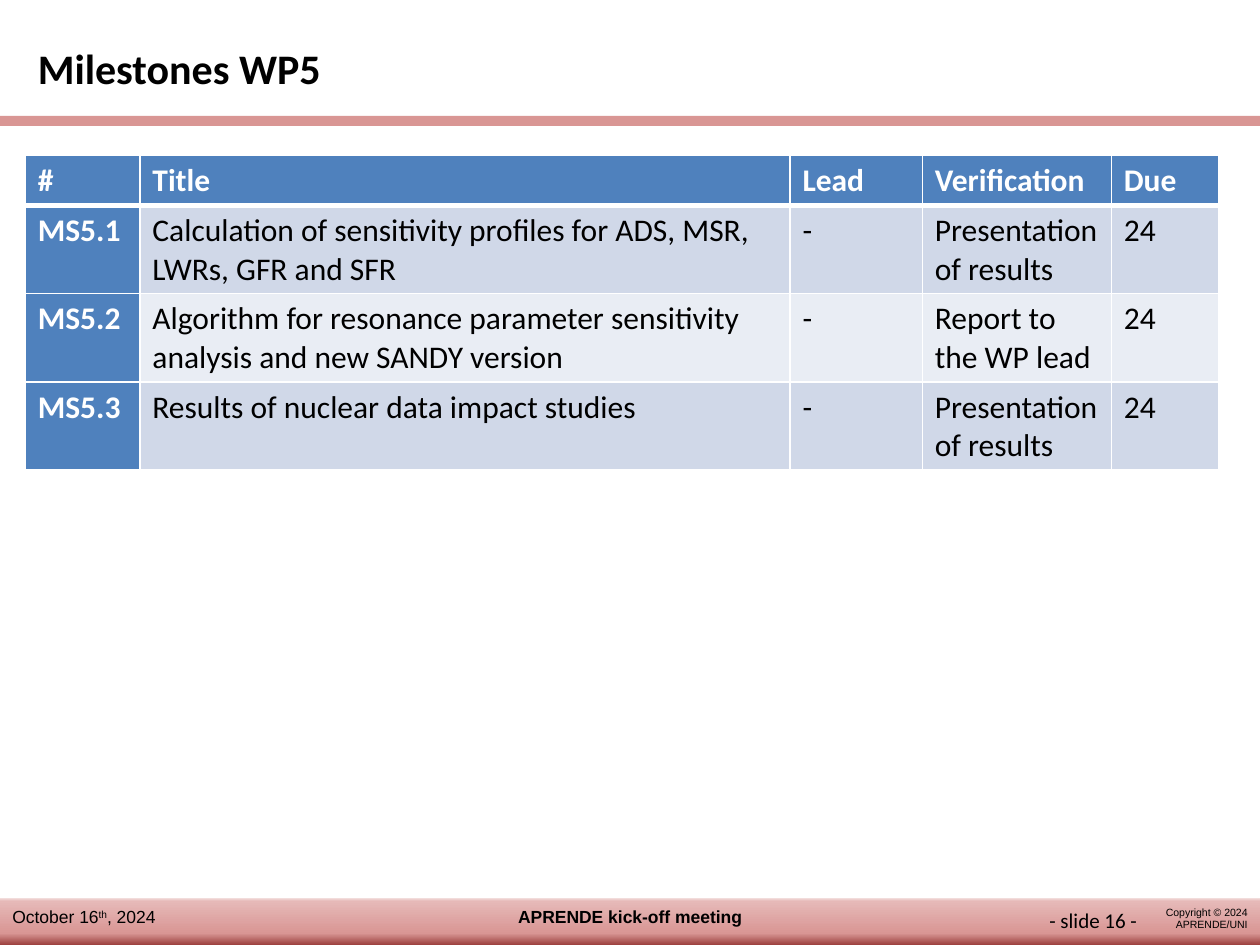
from lxml import etree
from pptx import Presentation
from pptx.dml.color import RGBColor
from pptx.enum.shapes import MSO_SHAPE
from pptx.enum.text import MSO_ANCHOR, MSO_AUTO_SIZE, PP_ALIGN
from pptx.oxml.ns import qn
from pptx.util import Inches, Pt

RECTANGLE = MSO_SHAPE.RECTANGLE
TOP = MSO_ANCHOR.TOP
FIT_SHAPE = MSO_AUTO_SIZE.SHAPE_TO_FIT_TEXT
LEFT, CENTER, RIGHT = PP_ALIGN.LEFT, PP_ALIGN.CENTER, PP_ALIGN.RIGHT

COLORS = {
    "black": "000000",
    "white": "FFFFFF",
    "rule": "D99694",
    "header": "4F81BD",
    "odd_row": "D0D8E8",
    "even_row": "E9EDF4",
}
FOOTER_STOPS = [(0, "953735"), (27, "D99694"), (94, "E6B9B8"), (100, "F2DCDB")]

COLUMN_WIDTHS = [0.91, 5.16, 1.05, 1.5, 0.85]
HEADER_HEIGHT, ROW_HEIGHT = 0.4, 0.7
MILESTONES = [
    ["#", "Title", "Lead", "Verification", "Due"],
    ["MS5.1", "Calculation of sensitivity profiles for ADS, MSR, LWRs, GFR and SFR",
     "-", "Presentation of results", "24"],
    ["MS5.2", "Algorithm for resonance parameter sensitivity analysis and new SANDY version",
     "-", "Report to\nthe WP lead", "24"],
    ["MS5.3", "Results of nuclear data impact studies",
     "-", "Presentation of results", "24"],
]


def format_text(frame, size, font="Arial", color="black", bold=False, align=LEFT):
    """Apply one style to every run of a text frame."""
    for paragraph in frame.paragraphs:
        paragraph.alignment = align
        for run in paragraph.runs:
            run.font.size = Pt(size)
            run.font.name = font
            run.font.bold = bold
            run.font.color.rgb = RGBColor.from_string(COLORS[color])


def add_label(slide, box, text, size, wrap=True, **style):
    """Add a text box and return its text frame."""
    frame = slide.shapes.add_textbox(*map(Inches, box)).text_frame
    frame.word_wrap = wrap
    frame.auto_size = FIT_SHAPE
    frame.text = text
    format_text(frame, size, **style)
    return frame


def add_band(slide, box):
    """Add a borderless rectangle in the rule colour."""
    band = slide.shapes.add_shape(RECTANGLE, *map(Inches, box))
    band.shadow.inherit = False
    band.line.fill.background()
    band.fill.solid()
    band.fill.fore_color.rgb = RGBColor.from_string(COLORS["rule"])
    return band


def apply_gradient(band, stops):
    """Fill a band with a gradient running from bottom to top."""
    band.fill.gradient()
    band.fill.gradient_angle = 90
    stop_list = band._element.spPr.find(".//" + qn("a:gsLst"))
    for old_stop in list(stop_list):
        stop_list.remove(old_stop)
    for position, color in stops:
        stop = etree.SubElement(stop_list, qn("a:gs"), pos=str(position * 1000))
        etree.SubElement(stop, qn("a:srgbClr"), val=color)


def add_footer(slide):
    """Add the footer band with date, event, slide number and copyright."""
    apply_gradient(add_band(slide, (0, 7.13, 10, 0.38)), FOOTER_STOPS)
    date = add_label(slide, (0, 7.14, 2.78, 0.27), "October 16", 10)
    for part in ("th", ", 2024"):
        date.paragraphs[0].add_run().text = part
    format_text(date, 10)
    date.paragraphs[0].runs[1]._r.get_or_add_rPr().set("baseline", "30000")
    add_label(slide, (3.61, 7.14, 2.78, 0.27), "APRENDE kick-off meeting", 10,
              bold=True, align=CENTER)
    add_label(slide, (9.09, 7.14, 0.91, 0.3), "Copyright © 2024\nAPRENDE/UNI", 6,
              align=RIGHT)
    add_label(slide, (8.23, 7.15, 0.93, 0.3), "- slide 16 -", 12, wrap=False,
              font="Calibri")


def set_title(slide, text):
    """Place and format the slide title."""
    title = slide.shapes.title
    title.left, title.top, title.width, title.height = map(Inches, (0.2, 0.29, 5, 0.5))
    frame = title.text_frame
    frame.text = text
    frame.word_wrap = True
    frame.auto_size = FIT_SHAPE
    frame.vertical_anchor = TOP
    format_text(frame, 24, font="Calibri", bold=True)


def set_borders(cell, widths):
    """Draw white cell borders, given in points for each side."""
    properties = cell._tc.get_or_add_tcPr()
    for index, (side, width) in enumerate(widths.items()):
        border = etree.Element(qn(f"a:ln{side}"), w=str(Pt(width)))
        fill = etree.SubElement(border, qn("a:solidFill"))
        etree.SubElement(fill, qn("a:srgbClr"), val=COLORS["white"])
        properties.insert(index, border)


def format_cell(cell, row, column):
    """Style a cell by its place in the table."""
    heading = row == 0 or column == 0
    fill = "header" if heading else "odd_row" if row % 2 else "even_row"
    cell.fill.solid()
    cell.fill.fore_color.rgb = RGBColor.from_string(COLORS[fill])
    format_text(cell.text_frame, 18, font="Calibri", bold=heading,
                color="white" if heading else "black")
    set_borders(cell, {"L": 1, "R": 1, "T": 3 if row == 1 else 1,
                       "B": 3 if row == 0 else 1})


def add_milestone_table(slide):
    """Add the table of milestones."""
    heights = [HEADER_HEIGHT] + [ROW_HEIGHT] * (len(MILESTONES) - 1)
    box = (0.2, 1.23, sum(COLUMN_WIDTHS), sum(heights))
    table = slide.shapes.add_table(len(heights), len(COLUMN_WIDTHS),
                                   *map(Inches, box)).table
    table.first_col = True
    for column, width in zip(table.columns, COLUMN_WIDTHS):
        column.width = Inches(width)
    for row, (height, texts) in enumerate(zip(heights, MILESTONES)):
        table.rows[row].height = Inches(height)
        for column, text in enumerate(texts):
            cell = table.cell(row, column)
            cell.text_frame.text = text
            format_cell(cell, row, column)


def main():
    """Build and save the slide."""
    deck = Presentation()
    deck.slide_width, deck.slide_height = Inches(10), Inches(7.5)
    slide = deck.slides.add_slide(deck.slide_layouts[5])
    set_title(slide, "Milestones WP5")
    add_band(slide, (0, 0.92, 10, 0.08))
    add_milestone_table(slide)
    add_footer(slide)
    deck.save("out.pptx")


if __name__ == "__main__":
    main()
